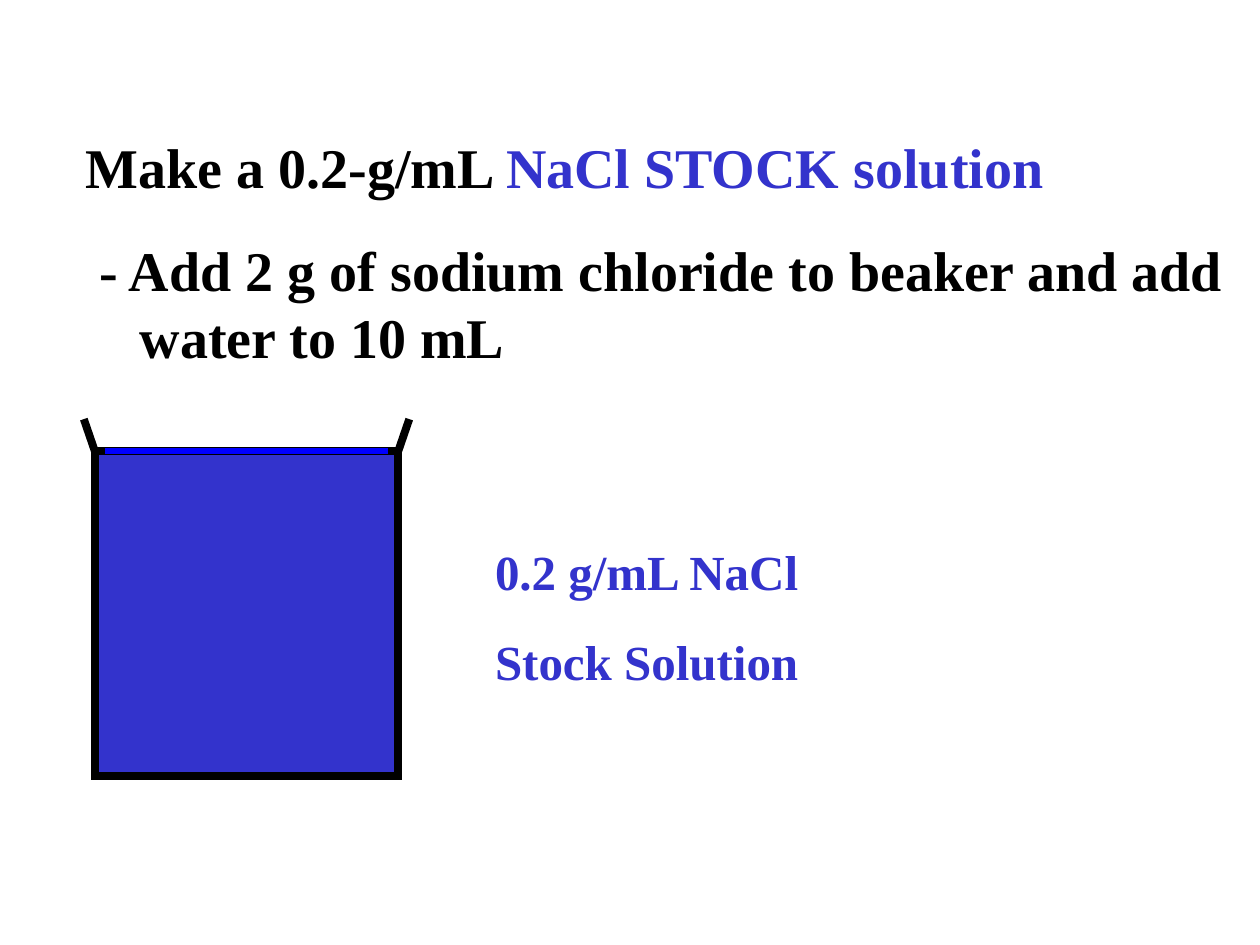
import pptx
import pptx.util
from lxml import etree
from pptx.dml.color import RGBColor
from pptx.enum.shapes import MSO_CONNECTOR, MSO_SHAPE
from pptx.enum.text import MSO_ANCHOR, MSO_AUTO_SIZE, PP_ALIGN
from pptx.oxml.ns import qn
from pptx.util import Cm, Pt

BLACK = RGBColor(0x00, 0x00, 0x00)
SOLUTION = RGBColor(0x33, 0x33, 0xCC)
SURFACE = RGBColor(0x00, 0x00, 0xFF)
FONT = "Times New Roman"

# Each paragraph is a list of (text, colour) runs.
TITLE = [[("Make a 0.2-g/mL ", BLACK), ("NaCl STOCK solution", SOLUTION)]]
STEP = [[("- Add 2 g of sodium chloride to beaker and add water to 10 mL", BLACK)]]
LABEL = [[("0.2 g/mL NaCl", SOLUTION)], [("Stock Solution", SOLUTION)]]

# Beaker geometry in centimetres
LEFT, TOP, WIDTH, HEIGHT = 1.91, 9.09, 6.12, 6.55
RIGHT = LEFT + WIDTH
LIP_OUT, LIP_UP = 0.22, 0.64
SURFACE_INSET = 0.2


def place(sp, left, top, width, height):
    sp.left, sp.top, sp.width, sp.height = Cm(left), Cm(top), Cm(width), Cm(height)


def write(sp, paragraphs, size, space_before=0):
    tf = sp.text_frame
    tf.word_wrap = True
    tf.auto_size = MSO_AUTO_SIZE.NONE
    tf.vertical_anchor = MSO_ANCHOR.TOP
    for i, runs in enumerate(paragraphs):
        p = tf.add_paragraph() if i else tf.paragraphs[0]
        p.alignment = PP_ALIGN.LEFT
        p.space_before = Pt(space_before if i else 0)
        for text, color in runs:
            r = p.add_run()
            r.text = text
            r.font.name, r.font.size, r.font.bold = FONT, Pt(size), True
            r.font.color.rgb = color


def add_line(shapes, x1, y1, x2, y2, color, weight):
    line = shapes.add_connector(MSO_CONNECTOR.STRAIGHT, Cm(x1), Cm(y1), Cm(x2), Cm(y2))
    line.line.color.rgb = color
    line.line.width = Pt(weight)
    etree.SubElement(line._element.spPr, qn("a:effectLst"))


prs = pptx.Presentation()
prs.slide_width, prs.slide_height = Cm(25.4), Cm(19.05)
s = prs.slides.add_slide(prs.slide_layouts[1])

title, step = s.shapes.title, s.placeholders[1]
place(title, 1.47, 2.54, 23.93, 1.57)
write(title, TITLE, 32)

place(step, 1.47, 4.62, 23.93, 3)
write(step, STEP, 32)
pPr = step.text_frame.paragraphs[0]._p.get_or_add_pPr()
pPr.set("marL", str(Cm(1.09)))
pPr.set("indent", str(Cm(-0.81)))
etree.SubElement(pPr, qn("a:buNone"))

beaker = s.shapes.add_group_shape()
body = beaker.shapes.add_shape(MSO_SHAPE.RECTANGLE, Cm(LEFT), Cm(TOP), Cm(WIDTH), Cm(HEIGHT))
body.shadow.inherit = False
body.fill.solid()
body.fill.fore_color.rgb = SOLUTION
body.line.color.rgb = BLACK
body.line.width = Pt(4.5)
etree.SubElement(body.line._get_or_add_ln(), qn("a:miter"), lim="800000")
for x, direction in ((LEFT, -1), (RIGHT, 1)):
    add_line(beaker.shapes, x, TOP, x + direction * LIP_OUT, TOP - LIP_UP, BLACK, 4.5)

label = s.shapes.add_textbox(Cm(9.73), Cm(10.8), Cm(9.96), Cm(3.25))
write(label, LABEL, 28, space_before=17.5)

add_line(s.shapes, LEFT + SURFACE_INSET, TOP, RIGHT - SURFACE_INSET, TOP, SURFACE, 3)

prs.save("out.pptx")
